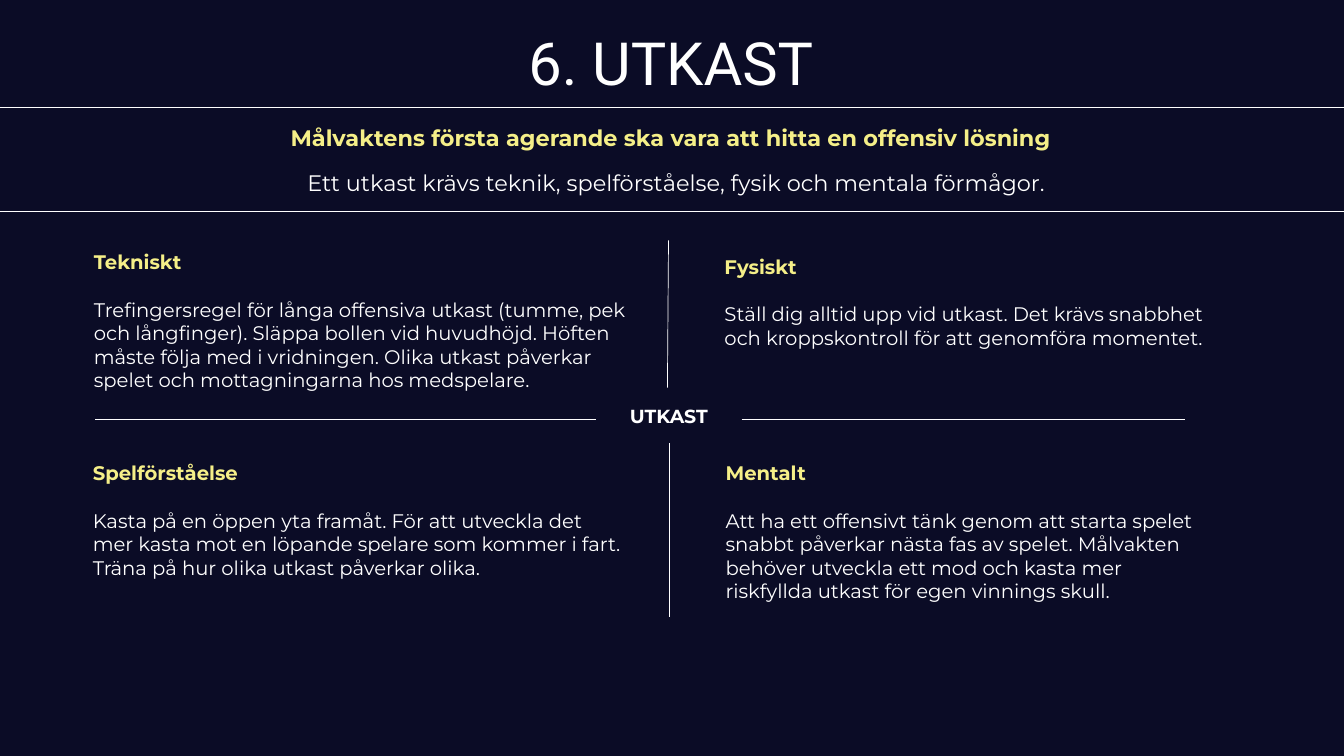
"""Build the UTKAST slide: title band and four quadrants around a centre label."""
from lxml import etree
from pptx import Presentation
from pptx.dml.color import RGBColor
from pptx.enum.shapes import MSO_CONNECTOR, MSO_SHAPE
from pptx.enum.text import MSO_ANCHOR, MSO_AUTO_SIZE, PP_ALIGN
from pptx.oxml.ns import qn
from pptx.util import Inches, Pt

LEFT, CENTER = PP_ALIGN.LEFT, PP_ALIGN.CENTER
TOP, MIDDLE = MSO_ANCHOR.TOP, MSO_ANCHOR.MIDDLE
GROW = MSO_AUTO_SIZE.SHAPE_TO_FIT_TEXT
ROUND, STRAIGHT = MSO_SHAPE.ROUNDED_RECTANGLE, MSO_CONNECTOR.STRAIGHT
NAVY, YELLOW, WHITE = "0B0C26", "F5EF88", "FFFFFF"

prs = Presentation()
prs.slide_width, prs.slide_height = Inches(26.66), Inches(15)
COL, ROW = prs.slide_width / 100, prs.slide_height / 100
s = prs.slides.add_slide(prs.slide_layouts[6])
s.background.fill.solid()
s.background.fill.fore_color.rgb = RGBColor.from_string(NAVY)


def grid(*cells):
    return [round(c * (ROW if i % 2 else COL)) for i, c in enumerate(cells)]


def write(sp, align, anchor, *paragraphs):
    tf = sp.text_frame
    tf.word_wrap, tf.vertical_anchor = True, anchor
    for i, (text, color, before, fmt) in enumerate(paragraphs):
        p = tf.add_paragraph() if i else tf.paragraphs[0]
        p.alignment = align
        if before:
            p.space_before = Pt(before)
        r = p.add_run()
        r.text = text
        r.font.color.rgb = RGBColor.from_string(color)
        for key, value in fmt.items():
            setattr(r.font, key, value)


title = {"name": "Roboto", "size": Pt(85)}
lead = {"name": "Montserrat", "size": Pt(32)}
body = {"name": "Montserrat", "size": Pt(28), "bold": False}
head = {**body, "bold": True}

quadrants = [
    ((5.96, 59.67, 41.52, 21.07), "Spelförståelse",
     "Kasta på en öppen yta framåt. För att utveckla det mer kasta mot en löpande "
     "spelare som kommer i fart. Träna på hur olika utkast påverkar olika."),
    ((6.04, 31.73, 41.49, 21.07), "Tekniskt",
     "Trefingersregel för långa offensiva utkast (tumme, pek och långfinger). "
     "Släppa bollen vid huvudhöjd. Höften måste följa med i vridningen. "
     "Olika utkast påverkar spelet och mottagningarna hos medspelare."),
    ((52.96, 32.33, 38.9, 21.07), "Fysiskt",
     "Ställ dig alltid upp vid utkast. Det krävs snabbhet och kroppskontroll "
     "för att genomföra momentet."),
    ((53.04, 59.67, 36.68, 21.07), "Mentalt",
     "Att ha ett offensivt tänk genom att starta spelet snabbt påverkar nästa fas "
     "av spelet. Målvakten behöver utveckla ett mod och kasta mer riskfyllda "
     "utkast för egen vinnings skull."),
]
panels = [(cells, LEFT, TOP, [(name, YELLOW, 0, head), (text, WHITE, 34, body)])
          for cells, name, text in quadrants]
panels.append(((40.32, 45.2, 18.9, 19.67), CENTER, MIDDLE,
               [("UTKAST", WHITE, 0, {**head, "size": Pt(27)})]))
for cells, align, anchor, paragraphs in panels:
    sp = s.shapes.add_shape(ROUND, *grid(*cells))
    sp.shadow.inherit = False
    sp.fill.background()
    sp.line.fill.background()
    write(sp, align, anchor, *paragraphs)

headers = [
    ((17.82, 3.07, 64.18, 18.27),
     [("6. UTKAST", WHITE, 0, title),
      ("Målvaktens första agerande ska vara att hitta en offensiv lösning",
       YELLOW, 39, {**lead, "bold": True})]),
    ((17.03, 22.07, 66.58, 4.27),
     [("Ett utkast krävs teknik, spelförståelse, fysik och mentala förmågor.",
       WHITE, 0, lead)]),
]
for cells, paragraphs in headers:
    sp = s.shapes.add_textbox(*grid(*cells))
    write(sp, CENTER, TOP, *paragraphs)
    sp.text_frame.auto_size = GROW

rules = [
    ((7.09, 55.47, 44.34, 55.47), 0.5),
    ((49.74, 31.8, 49.66, 51.27), 1),
    ((55.18, 55.47, 88.15, 55.47), 0.5),
    ((49.77, 58.6, 49.77, 81.67), 1),
    ((0, 14.2, 100, 14.2), 0.5),
    ((0, 27.93, 100, 27.93), 0.5),
]
for cells, width in rules:
    rule = s.shapes.add_connector(STRAIGHT, *grid(*cells))
    rule.line.color.rgb = RGBColor.from_string(WHITE)
    rule.line.width = Pt(width)
    etree.SubElement(rule._element.spPr, qn("a:effectLst"))

prs.save("out.pptx")
